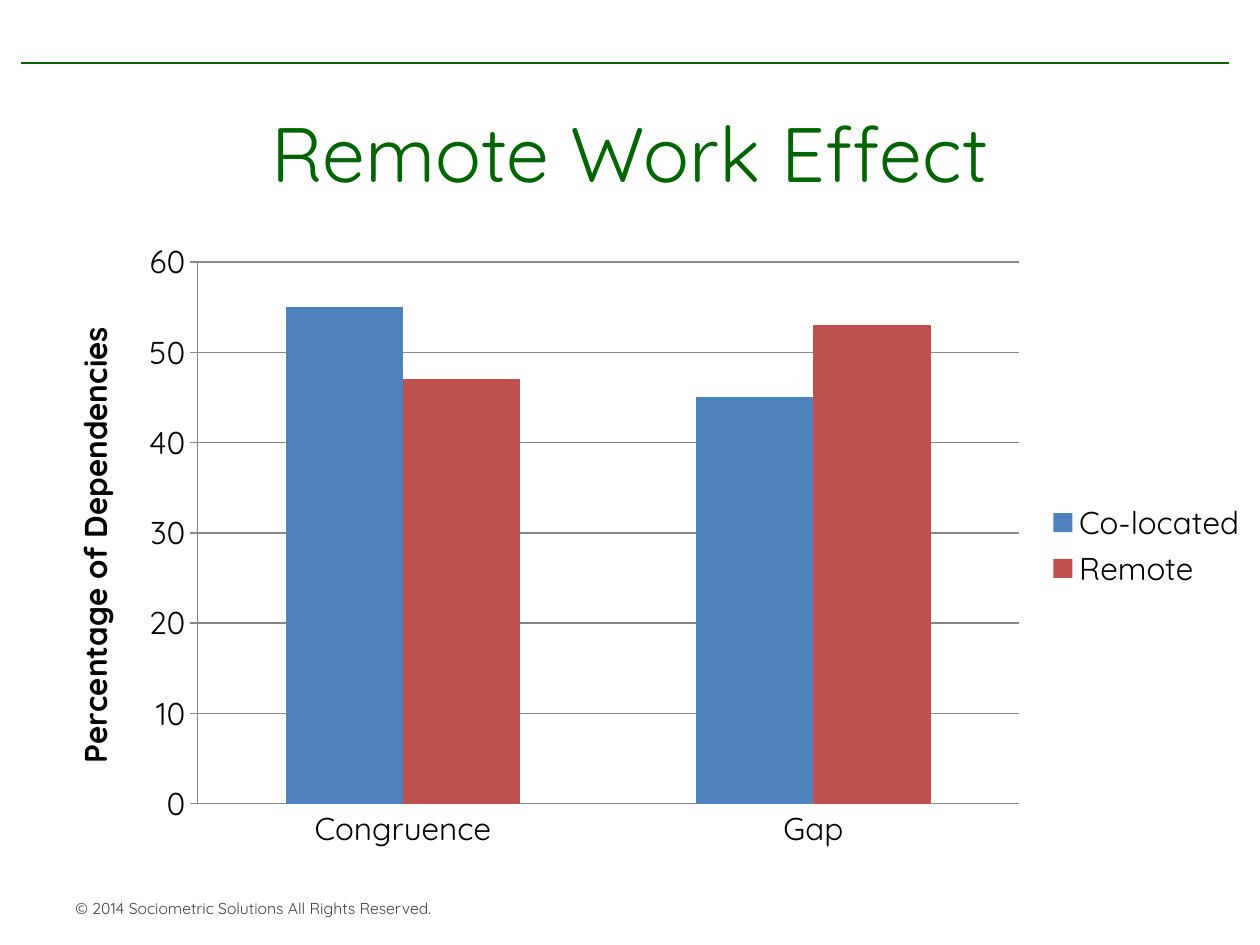
import pptx
import pptx.chart.data
import pptx.dml.color
import pptx.enum.chart
import pptx.enum.shapes
import pptx.enum.text
import pptx.oxml.ns
import pptx.oxml.xmlchemy
import pptx.util
from pptx.util import Inches

COLORS = {
    "green": "006400",
    "footer": "404040",
    "text": "000000",
    "axis": "868686",
    "colocated": "4F81BD",
    "remote": "C0504D",
}
FONT = "Quicksand"


def rgb(name):
    return pptx.dml.color.RGBColor.from_string(COLORS[name])


def style_font(font, size, color, bold=False):
    font.name = FONT
    font.size = pptx.util.Pt(size)
    font.bold = bold
    font.color.rgb = rgb(color)


def style_line(line, color, width):
    line.color.rgb = rgb(color)
    line.width = pptx.util.Pt(width)


def add_rule(slide, x1, x2, y):
    line = slide.shapes.add_connector(
        pptx.enum.shapes.MSO_CONNECTOR.STRAIGHT, x1, y, x2, y)
    style_line(line.line, "green", 1)
    line._element.spPr.append(pptx.oxml.xmlchemy.OxmlElement("a:effectLst"))


def add_footer(slide, x, y, w, h):
    tf = slide.shapes.add_textbox(x, y, w, h).text_frame
    tf.word_wrap = True
    tf.auto_size = pptx.enum.text.MSO_AUTO_SIZE.SHAPE_TO_FIT_TEXT
    p = tf.paragraphs[0]
    p.text = "© 2014 Sociometric Solutions All Rights Reserved."
    style_font(p.font, 9, "footer")


def set_title(slide, x, y, w, h):
    sp = slide.shapes.title
    sp.left, sp.top, sp.width, sp.height = x, y, w, h
    tf = sp.text_frame
    tf.vertical_anchor = pptx.enum.text.MSO_ANCHOR.MIDDLE
    p = tf.paragraphs[0]
    p.text = "Remote Work Effect"
    p.alignment = pptx.enum.text.PP_ALIGN.CENTER
    style_font(p.font, 44, "green")


def set_plot_layout(chart, x, y, w, h):
    plot_area = chart._chartSpace.chart.plotArea
    for old in plot_area.findall(pptx.oxml.ns.qn("c:layout")):
        plot_area.remove(old)
    layout = pptx.oxml.xmlchemy.OxmlElement("c:layout")
    manual = pptx.oxml.xmlchemy.OxmlElement("c:manualLayout")
    layout.append(manual)
    settings = [("layoutTarget", "inner"), ("xMode", "edge"), ("yMode", "edge"),
                ("x", x), ("y", y), ("w", w), ("h", h)]
    for tag, value in settings:
        item = pptx.oxml.xmlchemy.OxmlElement("c:" + tag)
        item.set("val", str(value))
        manual.append(item)
    plot_area.insert(0, layout)


def add_dependency_chart(slide, x, y, w, h):
    data = pptx.chart.data.CategoryChartData()
    data.categories = ["Congruence", "Gap"]
    data.add_series("Co-located", [55, 45])
    data.add_series("Remote", [47, 53])
    chart = slide.shapes.add_chart(
        pptx.enum.chart.XL_CHART_TYPE.COLUMN_CLUSTERED, x, y, w, h, data).chart
    style_font(chart.font, 18, "text")
    chart.has_title = False
    set_plot_layout(chart, 0.12, 0.05, 0.68, 0.86)

    plot = chart.plots[0]
    plot.gap_width = 150
    plot.overlap = 0
    plot.vary_by_categories = False
    for series, color in zip(plot.series, ("colocated", "remote")):
        series.format.fill.solid()
        series.format.fill.fore_color.rgb = rgb(color)

    tick = pptx.enum.chart.XL_TICK_MARK
    cat, val = chart.category_axis, chart.value_axis
    for axis, mark in ((cat, tick.NONE), (val, tick.OUTSIDE)):
        axis.major_tick_mark = mark
        axis.minor_tick_mark = tick.NONE
        style_font(axis.tick_labels.font, 18, "text")
        style_line(axis.format.line, "axis", 0.75)
    val.minimum_scale, val.maximum_scale, val.major_unit = 0, 60, 10
    val.has_major_gridlines = True
    style_line(val.major_gridlines.format.line, "axis", 0.75)
    p = val.axis_title.text_frame.paragraphs[0]
    p.add_run().text = "Percentage of Dependencies"
    style_font(p.font, 18, "text", bold=True)

    chart.has_legend = True
    chart.legend.position = pptx.enum.chart.XL_LEGEND_POSITION.RIGHT
    chart.legend.include_in_layout = False
    style_font(chart.legend.font, 18, "text")


def main():
    prs = pptx.Presentation()
    prs.slide_width, prs.slide_height = Inches(10), Inches(7.5)
    slide = prs.slides.add_slide(prs.slide_layouts[5])
    add_rule(slide, Inches(0.17), Inches(9.75), Inches(0.5))
    add_footer(slide, Inches(0.5), Inches(7.08), Inches(5), Inches(0.25))
    set_title(slide, Inches(0), Inches(0.58), Inches(10), Inches(1.25))
    add_dependency_chart(slide, Inches(0.42), Inches(1.83), Inches(9.58), Inches(5))
    prs.save("out.pptx")


if __name__ == "__main__":
    main()
